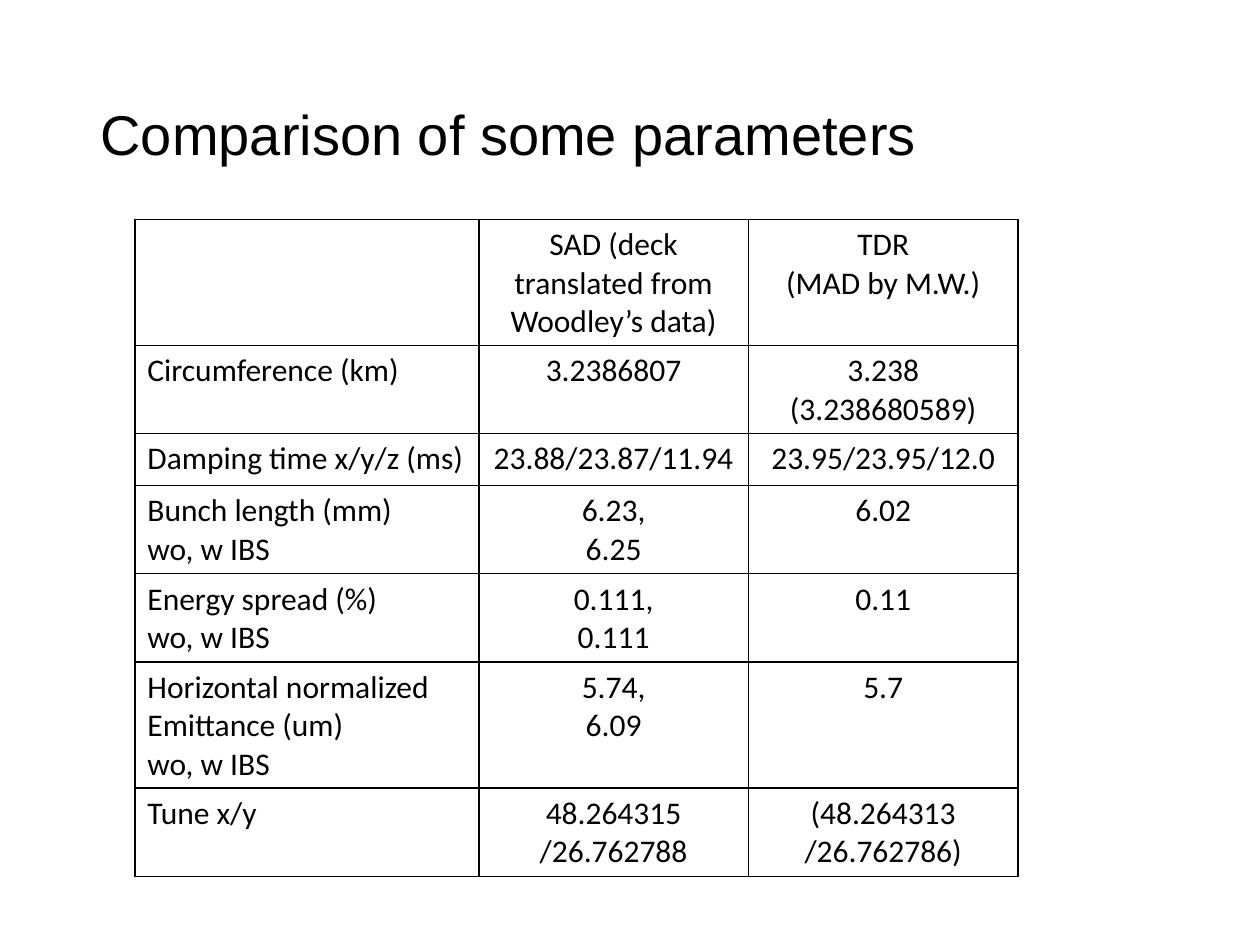
from lxml import etree
from pptx import Presentation
from pptx.dml.color import RGBColor
from pptx.enum.text import MSO_ANCHOR, PP_ALIGN
from pptx.oxml.ns import qn
from pptx.util import Inches, Pt

MIDDLE = MSO_ANCHOR.MIDDLE
LEFT, CENTER = PP_ALIGN.LEFT, PP_ALIGN.CENTER
WIDTH, HEIGHT = Inches(10), Inches(7.5)
BLANK_LAYOUT = 6
BORDER_SIDES = ("a:lnL", "a:lnR", "a:lnT", "a:lnB")
COLUMN_SHARES = (0.273, 0.214, 0.214)
ROW_SHARE = 0.055
PARAMETERS = [
    ("", "SAD (deck translated from Woodley’s data)", "TDR\n(MAD by M.W.)"),
    ("Circumference (km)", "3.2386807", "3.238\n(3.238680589)"),
    ("Damping time x/y/z (ms)", "23.88/23.87/11.94", "23.95/23.95/12.0"),
    ("Bunch length (mm)\nwo, w IBS", "6.23,\n6.25", "6.02"),
    ("Energy spread (%)\nwo, w IBS", "0.111,\n0.111", "0.11"),
    ("Horizontal normalized Emittance (um)\nwo, w IBS", "5.74,\n6.09", "5.7"),
    ("Tune x/y", "48.264315\n/26.762788", "(48.264313\n/26.762786)"),
]


def color(value):
    return RGBColor.from_string(value)


def apply_format(target, values):
    for name, value in values.items():
        setattr(target, name, value)


class SlideBuilder:
    """Hold the style and the current slide, and add elements by shares of its size."""

    ink = "000000"
    title_font = {"name": "Arial", "size": Pt(32)}
    table_font = {"name": "Calibri", "size": Pt(18)}
    border_width = Pt(1)

    def __init__(self, deck):
        self.page = deck.slides.add_slide(deck.slide_layouts[BLANK_LAYOUT])

    def place(self, left, top, width, height):
        return [round(share * side) for share, side in
                zip((left, top, width, height), (WIDTH, HEIGHT, WIDTH, HEIGHT))]

    def add_text(self, frame, text, font, paragraph_format):
        for index, line in enumerate(text.split("\n")):
            para = frame.add_paragraph() if index else frame.paragraphs[0]
            apply_format(para, paragraph_format)
            span = para.add_run() if line else para
            span.text = line
            apply_format(span.font, font)
            span.font.color.rgb = color(self.ink)

    def title(self, text, area):
        box = self.page.shapes.add_textbox(*self.place(*area))
        apply_format(box.text_frame, {"word_wrap": True, "vertical_anchor": MIDDLE})
        self.add_text(box.text_frame, text, self.title_font,
                      {"alignment": LEFT, "line_spacing": 0.9})

    def border(self, cell):
        properties = cell._tc.get_or_add_tcPr()
        for side in BORDER_SIDES:
            line = etree.SubElement(properties, qn(side), w=str(int(self.border_width)))
            fill = etree.SubElement(line, qn("a:solidFill"))
            etree.SubElement(fill, qn("a:srgbClr"), val=self.ink)

    def table(self, rows, left, top, height):
        area = self.place(left, top, sum(COLUMN_SHARES), height)
        grid = self.page.shapes.add_table(len(rows), len(COLUMN_SHARES), *area).table
        apply_format(grid, {"first_row": False, "horz_banding": False})
        for column, share in zip(grid.columns, COLUMN_SHARES):
            column.width = round(share * WIDTH)
        for row, texts in zip(grid.rows, rows):
            row.height = round(ROW_SHARE * HEIGHT)
            for index, (cell, text) in enumerate(zip(row.cells, texts)):
                self.border(cell)
                cell.fill.background()
                self.add_text(cell.text_frame, text, self.table_font,
                              {"alignment": CENTER if index else LEFT})


def main():
    deck = Presentation()
    apply_format(deck, {"slide_width": WIDTH, "slide_height": HEIGHT})
    builder = SlideBuilder(deck)
    builder.title("Comparison of some parameters", (0.07, 0.05, 0.86, 0.19))
    builder.table(PARAMETERS, 0.107, 0.232, 0.695)
    deck.save("out.pptx")


if __name__ == "__main__":
    main()
